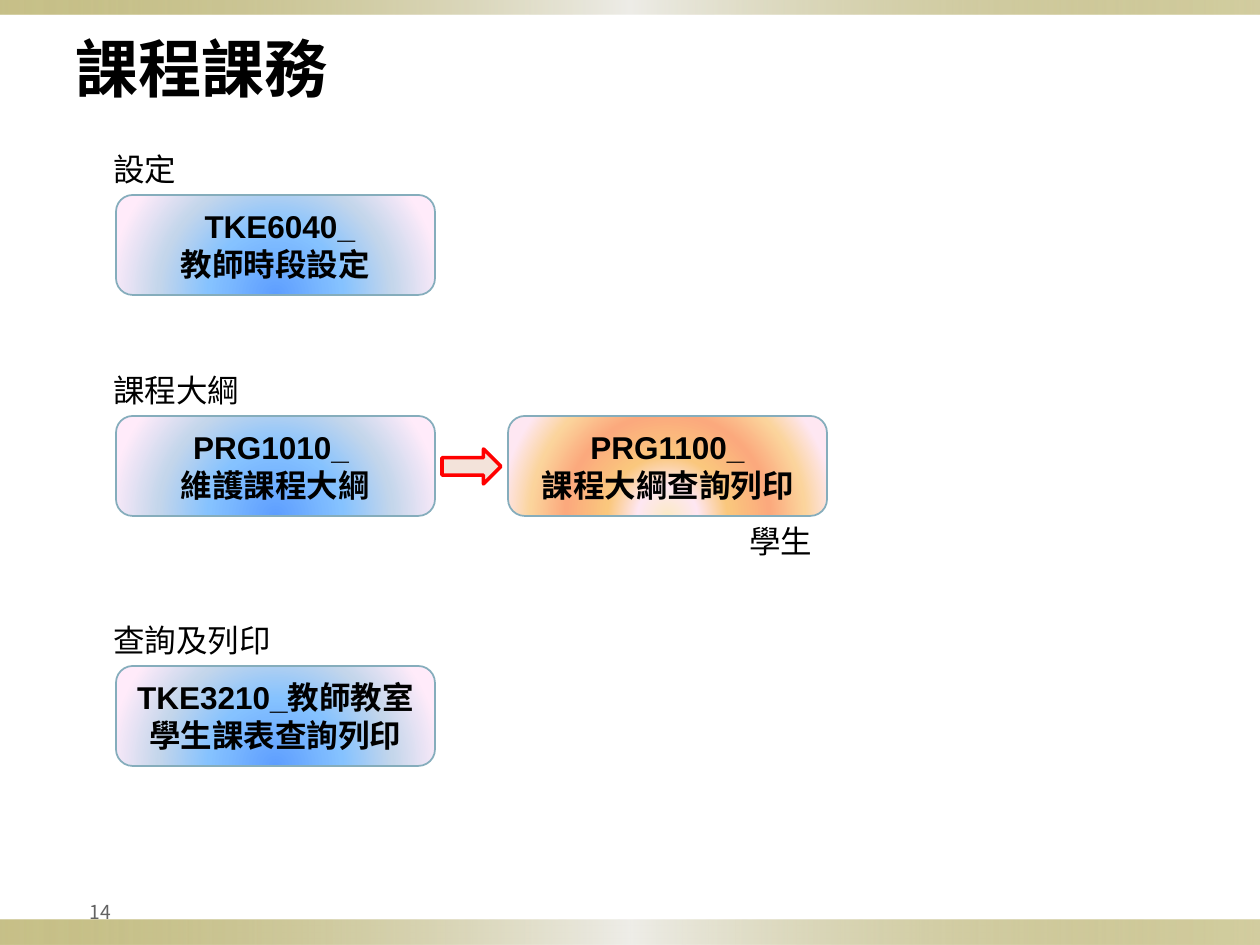
from lxml.etree import SubElement
from pptx import Presentation
from pptx.dml.color import RGBColor
from pptx.enum.shapes import MSO_SHAPE
from pptx.enum.text import MSO_ANCHOR, MSO_AUTO_SIZE, PP_ALIGN
from pptx.oxml.ns import qn
from pptx.util import Pt

EMU_PER_PX = 914400 / 126
BAR_STOPS = [(0, "918415", 50), (50, "EEEDE8", 100), (100, "918415", 40)]
BLUE_STOPS = [(0, "5E9EFF", 100), (40, "85C2FF", 100), (70, "C4D6EB", 100), (100, "FFEBFA", 100)]
ORANGE_STOPS = [(0, "FBEAC7", 100), (18, "FEE7F2", 100), (36, "FAC77D", 100),
                (61, "FBA97D", 100), (82, "FBD49C", 100), (100, "FEE7F2", 100)]
BOX_LEFT, BOX_WIDTH, BOX_HEIGHT = 116, 319, 100
STUDENT_LEFT = 508
SECTIONS = [
    (195, "設定", [" TKE6040_", "教師時段設定"]),
    (416, "課程大綱", ["PRG1010_ ", "維護課程大綱"]),
    (666, "查詢及列印", ["TKE3210_教師教室學生課表查詢列印"]),
]


def px(length):
    """Turn pixels into EMU."""
    return round(length * EMU_PER_PX)


def colour(hex_code):
    """Turn a hex string into a colour."""
    return RGBColor.from_string(hex_code)


def fill_gradient(shape, stops, radial):
    """Fill a shape with a left-to-right gradient, or one spreading from its bottom centre."""
    shape.fill.gradient()
    gradient = shape.element.spPr.find(qn("a:gradFill"))
    for child in list(gradient):
        gradient.remove(child)
    stop_list = SubElement(gradient, qn("a:gsLst"))
    for position, hex_code, opacity in stops:
        stop = SubElement(stop_list, qn("a:gs"), pos=str(position * 1000))
        shade = SubElement(stop, qn("a:srgbClr"), val=hex_code)
        if opacity < 100:
            SubElement(shade, qn("a:alpha"), val=str(opacity * 1000))
    if radial:
        circle = SubElement(gradient, qn("a:path"), path="circle")
        SubElement(circle, qn("a:fillToRect"), l="50000", t="100000", r="50000")
    else:
        SubElement(gradient, qn("a:lin"), ang="0", scaled="0")


def format_text(frame, lines, size, font_name, hex_code, bold=False, align=PP_ALIGN.LEFT):
    """Write lines as paragraphs that share one format."""
    frame.text = "\n".join(lines)
    for paragraph in frame.paragraphs:
        paragraph.alignment = align
        font = paragraph.font
        font.size, font.name, font.bold = Pt(size), font_name, bold
        font.color.rgb = colour(hex_code)


def add_preset(slide, preset, left, top, width, height):
    """Add a preset shape without a shadow."""
    shape = slide.shapes.add_shape(preset, px(left), px(top), px(width), px(height))
    shape.shadow.inherit = False
    return shape


def add_bar(slide, top, height):
    """Add a full-width decorative bar."""
    bar = add_preset(slide, MSO_SHAPE.RECTANGLE, 0, top, 1260, height)
    fill_gradient(bar, BAR_STOPS, radial=False)
    bar.line.fill.background()


def add_program_box(slide, left, top, lines, stops):
    """Add a rounded box naming a program."""
    box = add_preset(slide, MSO_SHAPE.ROUNDED_RECTANGLE, left, top, BOX_WIDTH, BOX_HEIGHT)
    fill_gradient(box, stops, radial=True)
    box.line.color.rgb = colour("85ADBC")
    box.line.width = Pt(1)
    box.text_frame.word_wrap = True
    box.text_frame.vertical_anchor = MSO_ANCHOR.MIDDLE
    format_text(box.text_frame, lines, 18, "Arial", "000000", True, PP_ALIGN.CENTER)


def add_label(slide, left, top, text):
    """Add a one-line label sized to its text."""
    width = 25 + 32 * len(text)
    label = slide.shapes.add_textbox(px(left), px(top), px(width), px(50))
    label.text_frame.word_wrap = False
    label.text_frame.auto_size = MSO_AUTO_SIZE.SHAPE_TO_FIT_TEXT
    format_text(label.text_frame, [text], 18, "Arial", "000000")


def add_flow_arrow(slide):
    """Add the arrow from maintenance to enquiry."""
    arrow = add_preset(slide, MSO_SHAPE.RIGHT_ARROW, 442, 449, 59, 35)
    arrow.fill.solid()
    arrow.fill.fore_color.rgb = colour("F3E3DA")
    arrow.line.color.rgb = colour("FF0000")
    arrow.line.width = Pt(2)


def add_page_number(slide, number):
    """Add the page number at the bottom left."""
    page = slide.shapes.add_textbox(0, px(887), px(117), px(50))
    frame = page.text_frame
    frame.word_wrap = True
    frame.vertical_anchor = MSO_ANCHOR.MIDDLE
    frame.margin_left = frame.margin_right = frame.margin_top = frame.margin_bottom = px(6)
    format_text(frame, [number], 11, "Noto Sans CJK SC", "636363", align=PP_ALIGN.RIGHT)


def set_title(slide, text):
    """Place and format the slide title."""
    title = slide.shapes.title
    title.left, title.top, title.width, title.height = px(63), px(6), px(1134), px(122)
    title.text_frame.vertical_anchor = MSO_ANCHOR.MIDDLE
    format_text(title.text_frame, [text], 36, "Noto Sans CJK SC", "000000", True)


def main():
    """Build the course affairs slide."""
    presentation = Presentation()
    presentation.slide_width, presentation.slide_height = px(1260), px(945)
    slide = presentation.slides.add_slide(presentation.slide_layouts[5])
    add_bar(slide, 920, 25)
    add_bar(slide, 0, 15)
    add_page_number(slide, "14")
    set_title(slide, "課程課務")
    for top, heading, program in SECTIONS:
        add_label(slide, 101, top - 51, heading)
        add_program_box(slide, BOX_LEFT, top, program, BLUE_STOPS)
    add_program_box(slide, STUDENT_LEFT, 416, ["PRG1100_", "課程大綱查詢列印"], ORANGE_STOPS)
    add_flow_arrow(slide)
    add_label(slide, 737, 516, "學生")
    presentation.save("out.pptx")


if __name__ == "__main__":
    main()
